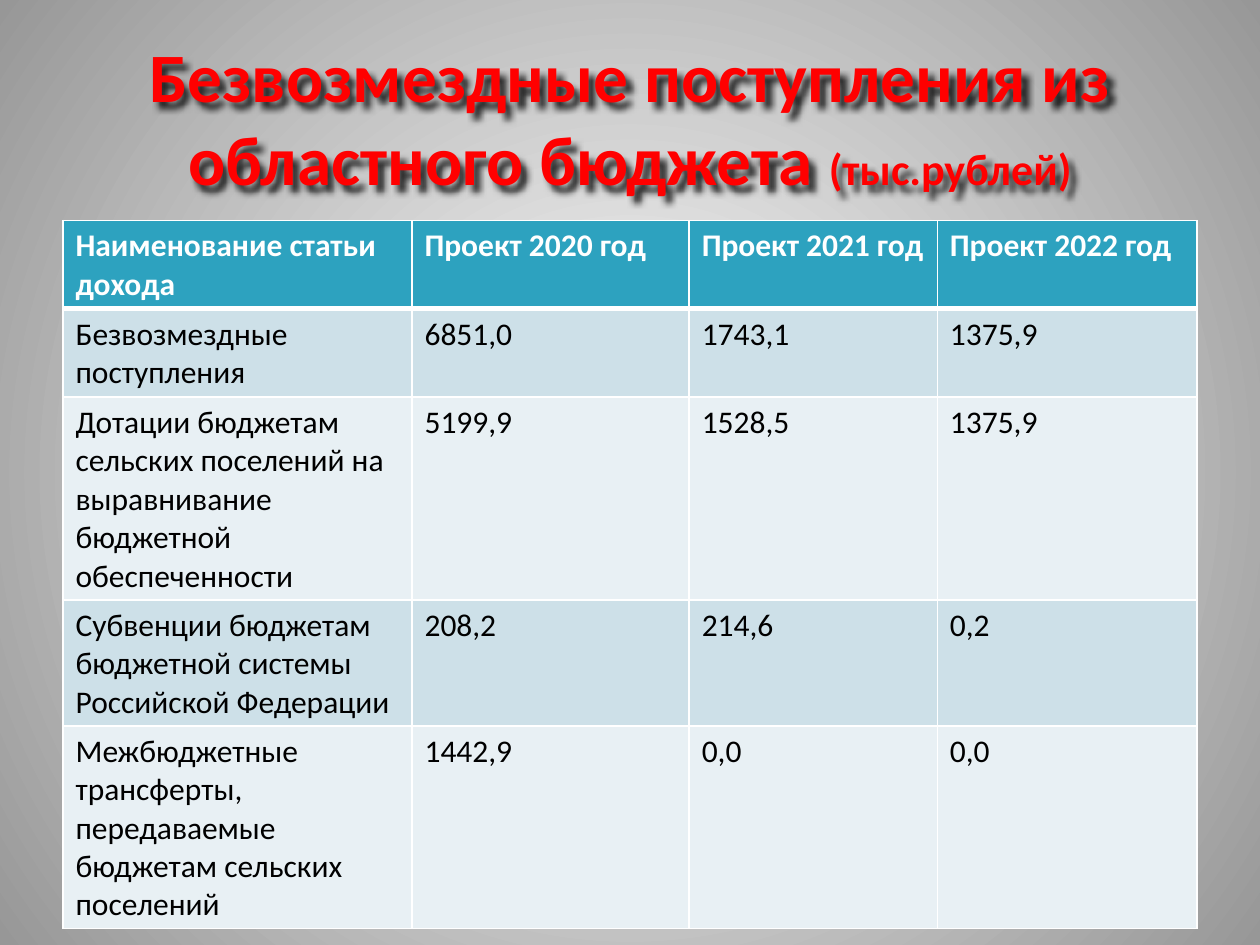
from dataclasses import dataclass

from lxml.etree import SubElement
from pptx import Presentation as Deck
from pptx.dml.color import RGBColor as Rgb
from pptx.enum.text import MSO_ANCHOR as Anchor, PP_ALIGN as Align
from pptx.oxml import parse_xml
from pptx.oxml.ns import nsdecls, qn
from pptx.util import Inches, Pt


@dataclass(frozen=True)
class Theme:
    font: str = "Calibri"
    red: str = "FF0000"
    white: str = "FFFFFF"
    black: str = "000000"
    gray: str = "979797"
    teal: str = "2DA2BF"
    bands: tuple = ("CDE0E8", "E8F0F4")
    title: float = 39.6
    unit: float = 25.2
    body: float = 18
    thin: float = 1
    thick: float = 3


HEAD = [("Безвозмездные поступления из областного бюджета ", Theme.title),
        ("(тыс.рублей)", Theme.unit)]
ROWS = [
    ("Наименование статьи дохода", "Проект 2020 год", "Проект 2021 год", "Проект 2022 год"),
    ("Безвозмездные поступления", "6851,0", "1743,1", "1375,9"),
    ("Дотации бюджетам сельских поселений на выравнивание бюджетной обеспеченности",
     "5199,9", "1528,5", "1375,9"),
    ("Субвенции бюджетам бюджетной системы Российской Федерации", "208,2", "214,6", "0,2"),
    ("Межбюджетные трансферты, передаваемые бюджетам сельских поселений",
     "1442,9", "0,0", "0,0"),
]
WIDE = (2.77, 2.2, 1.97, 2.06)
HIGH = (0.7, 0.7, 1.61, 1, 1.61)


class Page:
    """Draws styled elements on one slide."""

    def __init__(self, slide, theme):
        self.slide, self.theme = slide, theme

    def back(self):
        fill = self.slide.background.fill
        fill.gradient()
        for stop, tone in zip(fill.gradient_stops, (self.theme.white, self.theme.gray)):
            stop.color.rgb = Rgb.from_string(tone)
        for lin in list(self.slide.element.iter(qn("a:lin"))):
            lin.getparent().replace(lin, parse_xml(
                f'<a:path {nsdecls("a")} path="circle">'
                '<a:fillToRect l="50000" t="50000" r="50000" b="50000"/></a:path>'))

    def run(self, para, text, size, tone, bold):
        run = para.add_run()
        run.text = text
        form = {"name": self.theme.font, "size": Pt(size), "bold": bold}
        for key, val in form.items():
            setattr(run.font, key, val)
        run.font.color.rgb = Rgb.from_string(tone)

    def title(self, parts, box):
        shape = self.slide.shapes.add_textbox(*map(Inches, box))
        frame = shape.text_frame
        form = {"word_wrap": True, "vertical_anchor": Anchor.MIDDLE}
        for key, val in form.items():
            setattr(frame, key, val)
        para = frame.paragraphs[0]
        para.alignment = Align.CENTER
        for text, size in parts:
            self.run(para, text, size, self.theme.red, True)
        shape.element.spPr.append(parse_xml(
            f'<a:effectLst {nsdecls("a")}><a:outerShdw blurRad="50800" dist="50800" '
            'dir="3000000" algn="tl" rotWithShape="0"><a:srgbClr val="000000">'
            '<a:alpha val="80000"/></a:srgbClr></a:outerShdw></a:effectLst>'))

    def edge(self, cell, sides):
        props = cell._tc.get_or_add_tcPr()
        for spot, (side, width) in enumerate(sides.items()):
            line = parse_xml(f'<a:ln{side} {nsdecls("a")} w="{Pt(width)}"/>')
            fill = SubElement(line, qn("a:solidFill"))
            SubElement(fill, qn("a:srgbClr"), val=self.theme.white)
            props.insert(spot, line)

    def cell(self, cell, text, row):
        look, head = self.theme, row == 0
        cell.fill.solid()
        tone = look.teal if head else look.bands[(row - 1) % 2]
        cell.fill.fore_color.rgb = Rgb.from_string(tone)
        ink = look.white if head else look.black
        self.run(cell.text_frame.paragraphs[0], text, look.body, ink, head)
        self.edge(cell, {"L": look.thin, "R": look.thin,
                         "T": look.thick if row == 1 else look.thin,
                         "B": look.thick if head else look.thin})

    def table(self, rows, wide, high, left, top):
        box = map(Inches, (left, top, sum(wide), sum(high)))
        grid = self.slide.shapes.add_table(len(rows), len(wide), *box).table
        for col, size in zip(grid.columns, wide):
            col.width = Inches(size)
        for row, size in zip(grid.rows, high):
            row.height = Inches(size)
        for r, texts in enumerate(rows):
            for c, text in enumerate(texts):
                self.cell(grid.cell(r, c), text, r)


def main():
    deck = Deck()
    deck.slide_width, deck.slide_height = Inches(10), Inches(7.5)
    page = Page(deck.slides.add_slide(deck.slide_layouts[6]), Theme())
    page.back()
    page.title(HEAD, (0.5, 0.3, 9, 1.25))
    page.table(ROWS, WIDE, HIGH, 0.5, 1.75)
    deck.save("out.pptx")


if __name__ == "__main__":
    main()
